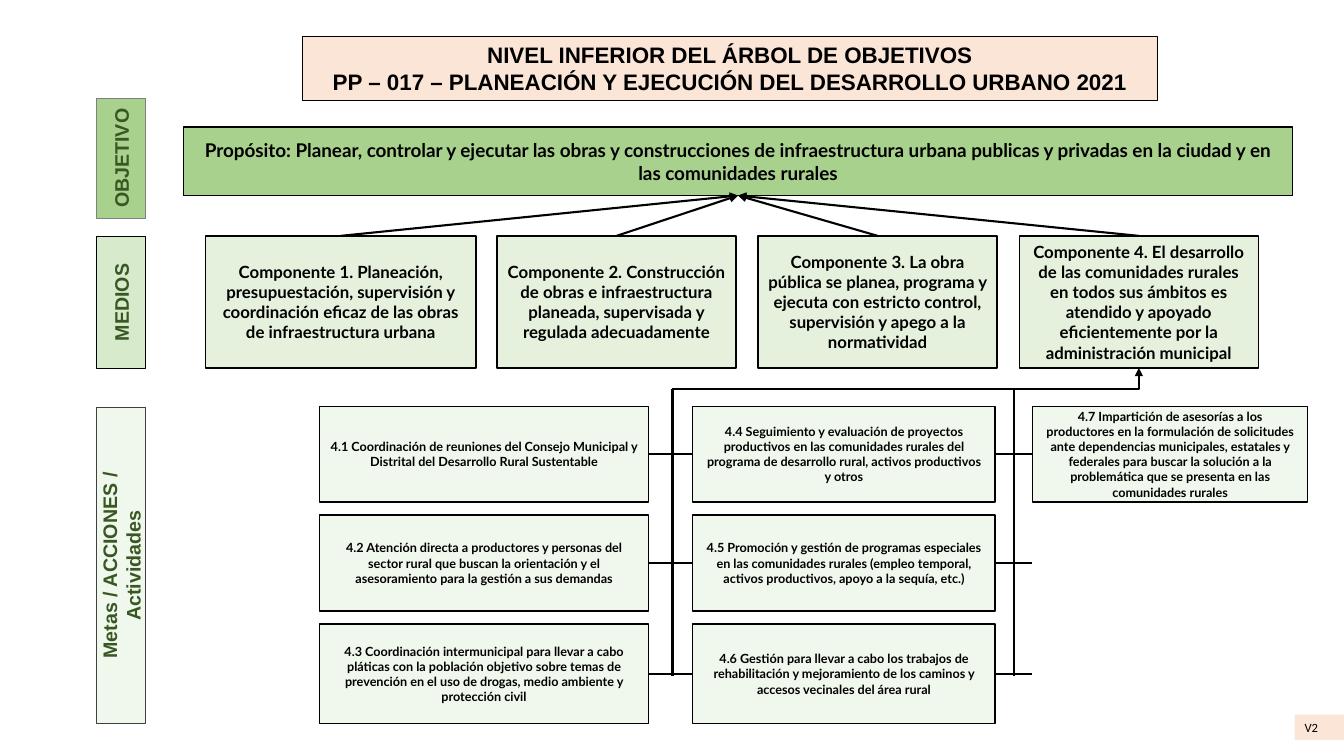
from dataclasses import dataclass

from lxml import etree
from pptx import Presentation
from pptx import util as u
from pptx.dml.color import RGBColor
from pptx.enum import shapes, text
from pptx.oxml.ns import qn


@dataclass(frozen=True)
class Theme:
    green: str = "A9D18E"
    pale_green: str = "C5E0B4"
    dark_green: str = "385723"
    peach: str = "FBE5D6"
    black: str = "000000"
    grey: str = "808080"
    dark_grey: str = "404040"
    heading_font: str = "Arial"
    body_font: str = "Lato"
    note_font: str = "Calibri"
    title_size: float = 16
    label_size: float = 14
    purpose_size: float = 13.5
    component_size: float = 12
    activity_size: float = 9
    box_line: float = 1
    link_line: float = 1.5


T = Theme()

TITLE = ("NIVEL INFERIOR DEL ÁRBOL DE OBJETIVOS",
         "PP – 017 – PLANEACIÓN Y EJECUCIÓN DEL DESARROLLO URBANO 2021")
PURPOSE = ("Propósito: Planear, controlar y ejecutar las obras y construcciones de "
           "infraestructura urbana publicas y privadas en la ciudad y en las comunidades rurales")

# text, center y, length, fill, opacity, line
LEVELS = [
    ("OBJETIVO", 1.57, 1.19, T.green, 100, T.grey),
    ("MEDIOS", 3.0, 1.31, T.green, 45, T.black),
    ("Metas / ACCIONES / Actividades", 5.61, 3.13, T.pale_green, 25, T.dark_grey),
]

# left, width, text
COMPONENTS = [
    (2.04, 2.68, "Componente 1. Planeación, presupuestación, supervisión y coordinación "
                 "eficaz de las obras de infraestructura urbana"),
    (4.93, 2.37, "Componente 2. Construcción de obras e infraestructura planeada, "
                 "supervisada y regulada adecuadamente"),
    (7.52, 2.37, "Componente 3. La obra pública se planea, programa y ejecuta con estricto "
                 "control, supervisión y apego a la normatividad"),
    (10.11, 2.37, "Componente 4. El desarrollo de las comunidades rurales en todos sus ámbitos "
                  "es atendido y apoyado eficientemente por la administración municipal"),
]

# left, width, texts from top to bottom
ACTIVITY_COLUMNS = [
    (3.17, 3.26, [
        "4.1 Coordinación de reuniones del Consejo Municipal y Distrital del Desarrollo "
        "Rural Sustentable",
        "4.2 Atención directa a productores y personas del sector rural que buscan la "
        "orientación y el asesoramiento para la gestión a sus demandas",
        "4.3 Coordinación intermunicipal para llevar a cabo pláticas con la población objetivo "
        "sobre temas de prevención en el uso de drogas, medio ambiente y protección civil"]),
    (6.87, 3.0, [
        "4.4 Seguimiento y evaluación de proyectos productivos en las comunidades rurales del "
        "programa de desarrollo rural, activos productivos y otros",
        "4.5 Promoción y gestión de programas especiales en las comunidades rurales (empleo "
        "temporal, activos productivos, apoyo a la sequía, etc.)",
        "4.6 Gestión para llevar a cabo los trabajos de rehabilitación y mejoramiento de los "
        "caminos y accesos vecinales del área rural"]),
    (10.24, 2.73, [
        "4.7 Impartición de asesorías a los productores en la formulación de solicitudes ante "
        "dependencias municipales, estatales y federales para buscar la solución a la "
        "problemática que se presenta en las comunidades rurales"]),
]
ACTIVITY_ROWS = [(4.03, 0.95), (5.11, 0.95), (6.19, 0.99)]  # top, height

PURPOSE_BOX = (1.82, 1.26, 11, 0.68)
COMPONENT_TOP, COMPONENT_HEIGHT = 2.34, 1.31
BUS_Y, BUS_END = 3.86, 6.71


def set_font(p, name, size, color, bold=True):
    p.font.name, p.font.size, p.font.bold = name, u.Pt(size), bold
    p.font.color.rgb = RGBColor.from_string(color)


def paint(sp, fill, opacity=100, line=None, width=T.box_line):
    """Set fill (opacity in percent) and outline."""
    sp.fill.solid()
    sp.fill.fore_color.rgb = RGBColor.from_string(fill)
    if opacity < 100:
        color = sp.fill._xPr.find(qn("a:solidFill"))[0]
        etree.SubElement(color, qn("a:alpha"), val=str(opacity * 1000))
    if line:
        sp.line.color.rgb = RGBColor.from_string(line)
        sp.line.width = u.Pt(width)
    else:
        sp.line.fill.background()


def add_box(s, at, label, size, fill, opacity=100, line=T.black,
            font=T.body_font, color=T.black):
    sp = s.shapes.add_shape(shapes.MSO_SHAPE.FLOWCHART_PROCESS, *map(u.Inches, at))
    sp.shadow.inherit = False
    paint(sp, fill, opacity, line)
    tf = sp.text_frame
    tf.word_wrap = True
    tf.vertical_anchor = text.MSO_ANCHOR.MIDDLE
    p = tf.paragraphs[0]
    p.text, p.alignment = label, text.PP_ALIGN.CENTER
    set_font(p, font, size, color)
    return sp


def add_link(s, start, end, arrow=False, elbow=False):
    kind = shapes.MSO_CONNECTOR.ELBOW if elbow else shapes.MSO_CONNECTOR.STRAIGHT
    c = s.shapes.add_connector(kind, *map(u.Inches, (*start, *end)))
    c.line.color.rgb = RGBColor.from_string(T.black)
    c.line.width = u.Pt(T.link_line)
    props = c._element.spPr
    if elbow:
        props.find(qn("a:prstGeom")).set("prst", "bentConnector2")
    if arrow:
        etree.SubElement(props.find(qn("a:ln")), qn("a:tailEnd"), type="triangle")
    etree.SubElement(props, qn("a:effectLst"))


def add_title(s):
    sp = s.shapes.title
    sp.left, sp.top, sp.width, sp.height = map(u.Inches, (3, 0.36, 8.48, 0.64))
    paint(sp, T.peach, line=T.black, width=0.75)
    tf = sp.text_frame
    tf.text = "\n".join(TITLE)
    tf.word_wrap = True
    tf.auto_size = text.MSO_AUTO_SIZE.NONE
    tf.vertical_anchor = text.MSO_ANCHOR.TOP
    for p in tf.paragraphs:
        p.alignment = text.PP_ALIGN.CENTER
        set_font(p, T.heading_font, T.title_size, T.black)


def add_levels(s):
    thickness, center_x = 0.49, 1.2
    for label, center_y, length, fill, opacity, line in LEVELS:
        at = (center_x - length / 2, center_y - thickness / 2, length, thickness)
        sp = add_box(s, at, label, T.label_size, fill, opacity, line,
                     T.heading_font, T.dark_green)
        sp.rotation = 270


def add_components(s):
    left, top, width, height = PURPOSE_BOX
    add_box(s, PURPOSE_BOX, PURPOSE, T.purpose_size, T.green)
    for x, w, label in COMPONENTS:
        add_box(s, (x, COMPONENT_TOP, w, COMPONENT_HEIGHT), label,
                T.component_size, T.green, 30)
        add_link(s, (x + w / 2, COMPONENT_TOP), (left + width / 2, top + height), arrow=True)


def add_activities(s):
    for x, w, labels in ACTIVITY_COLUMNS:
        for (y, h), label in zip(ACTIVITY_ROWS, labels):
            add_box(s, (x, y, w, h), label, T.activity_size, T.pale_green, 25)


def add_activity_links(s):
    """Join the columns by two vertical buses that lead up to component 4."""
    buses = (6.67, 10.06)
    for bus_x, (x, w, _), (next_x, _, _) in zip(buses, ACTIVITY_COLUMNS, ACTIVITY_COLUMNS[1:]):
        add_link(s, (bus_x, BUS_Y), (bus_x, BUS_END))
        for y, h in ACTIVITY_ROWS:
            add_link(s, (next_x, y + h / 2), (x + w, y + h / 2))
    add_link(s, (buses[1], BUS_Y), (buses[0], BUS_Y))
    x, w, _ = COMPONENTS[-1]
    add_link(s, (buses[1], BUS_Y), (x + w / 2, COMPONENT_TOP + COMPONENT_HEIGHT),
             arrow=True, elbow=True)


def add_version(s):
    sp = s.shapes.add_textbox(*map(u.Inches, (12.84, 7.09, 0.5, 0.25)))
    paint(sp, T.peach)
    sp.text_frame.word_wrap = True
    p = sp.text_frame.paragraphs[0]
    p.text = "V2"
    set_font(p, T.note_font, T.activity_size, T.black, bold=False)


def main():
    prs = Presentation()
    prs.slide_width, prs.slide_height = u.Inches(13.33), u.Inches(7.5)
    s = prs.slides.add_slide(prs.slide_layouts[5])
    for add_part in (add_title, add_levels, add_components, add_activities,
                     add_activity_links, add_version):
        add_part(s)
    prs.save("out.pptx")


if __name__ == "__main__":
    main()
